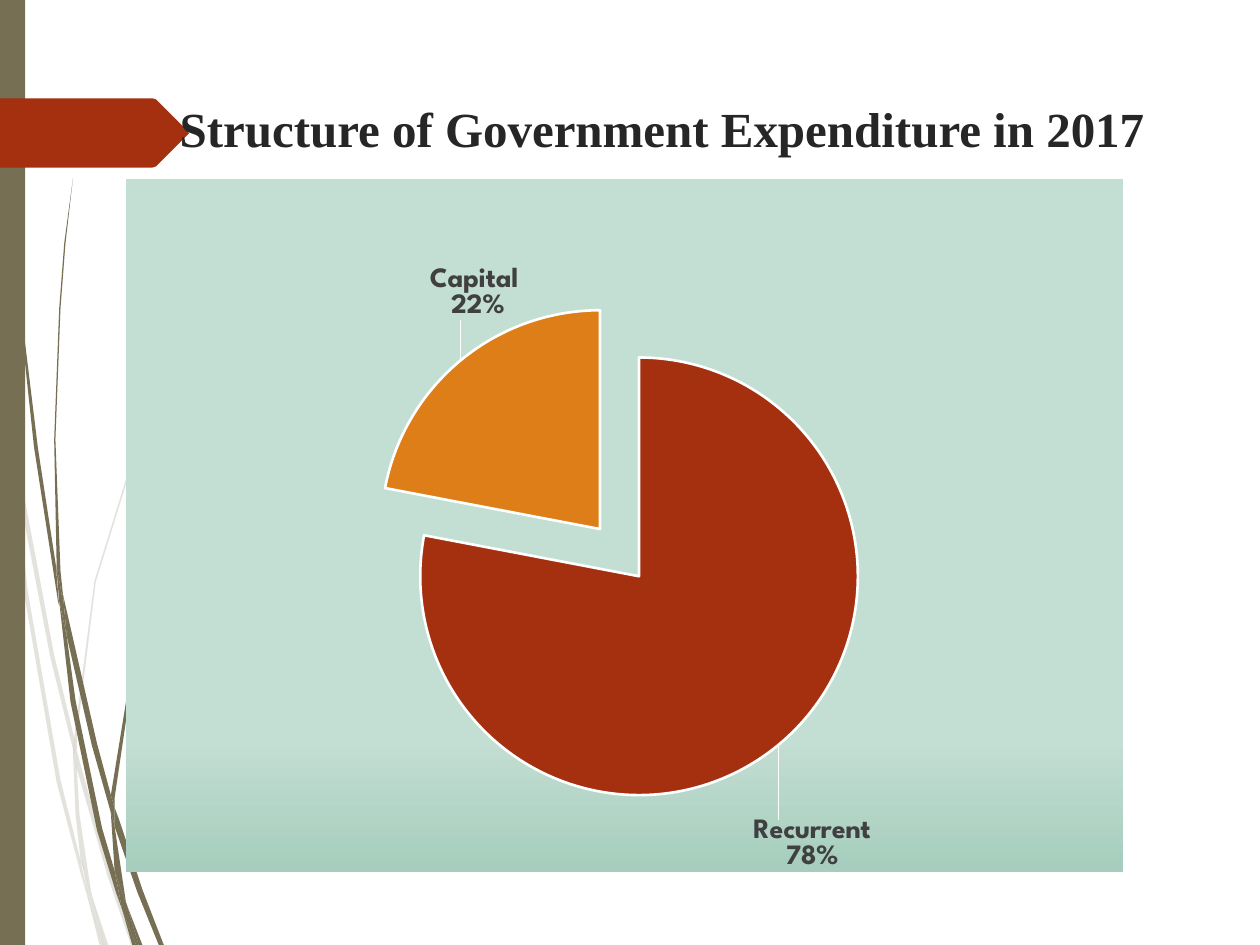
import copy
from dataclasses import dataclass

import lxml.etree
import pptx
import pptx.chart.data
import pptx.dml.color
import pptx.enum.chart
import pptx.enum.shapes
import pptx.enum.text
import pptx.oxml
import pptx.oxml.ns
import pptx.util
from pptx.util import Cm

RGBColor = pptx.dml.color.RGBColor
OLIVE = RGBColor(0x76, 0x6F, 0x54)
RUST = RGBColor(0xA5, 0x30, 0x10)
ORANGE = RGBColor(0xDE, 0x7E, 0x18)
WHITE = RGBColor(0xFF, 0xFF, 0xFF)
TITLE_COLOR = RGBColor(0x26, 0x26, 0x26)
LABEL_COLOR = RGBColor(0x40, 0x40, 0x40)
BLACK = RGBColor(0, 0, 0)
GRID = Cm(0.0254)  # outline points are hundredths of an inch
NAMESPACES = pptx.oxml.ns.nsdecls("c", "a")

Points = list[tuple[float, float]]


@dataclass
class Slice:
    name: str
    percent: int
    color: RGBColor
    label_shift: tuple[float, float]


SLICES = [
    Slice("Recurrent", 78, RUST, (-0.03, 0.1)),
    Slice("Capital ", 22, ORANGE, (0.07, -0.05)),
]

PALE_WISPS: list[Points] = [
    [(8, 350), (6, 322), (0, 282), (0, 299), (7, 344)],
    [(40, 522), (59, 599), (59, 586), (43, 520), (10, 345), (12, 376)],
    [(64, 607), (61, 596), (61, 610), (85, 694), (104, 750), (108, 750), (88, 692)],
    [(83, 750), (86, 750), (73, 711)],
    [(64, 683), (48, 619), (22, 469), (12, 376), (8, 350), (19, 470), (45, 621),
     (64, 693), (70, 714), (69, 707)],
    [(58, 599), (60, 646), (64, 683), (67, 692), (73, 711), (72, 706), (63, 646),
     (61, 610), (61, 608)],
    [(61, 584), (76, 462), (111, 349), (159, 245), (187, 198), (201, 175), (217, 154),
     (217, 153), (201, 175), (186, 197), (158, 244), (110, 348), (75, 461), (59, 584),
     (59, 586), (61, 596)],
    [(70, 714), (79, 750), (82, 750)],
    [(61, 608), (61, 610), (61, 596), (59, 586), (58, 599)],
    [(67, 692), (65, 683), (69, 707), (70, 714), (82, 750), (83, 750), (73, 711)],
]

DARK_WISPS: list[Points] = [
    [(5, 110), (14, 233), (27, 355), (46, 477), (47, 481), (45, 457), (45, 453),
     (30, 355), (15, 232), (6, 109), (4, 48), (3, 0), (2, 0), (3, 48)],
    [(73, 592), (88, 645), (88, 633), (88, 631), (77, 590), (50, 472), (53, 505)],
    [(94, 649), (91, 641), (91, 656), (109, 708), (126, 750), (130, 750), (113, 706)],
    [(91, 691), (81, 657), (60, 556), (53, 505), (47, 477), (56, 557), (77, 659),
     (92, 708), (97, 722), (96, 717)],
    [(50, 472), (48, 453), (44, 349), (48, 245), (52, 193), (58, 141), (57.5, 141),
     (51, 193), (47, 245), (43, 349), (45, 449), (49, 472)],
    [(110, 750), (113, 750), (101, 719)],
    [(47, 477), (53, 505), (50, 472), (49, 472), (45, 449), (45, 453)],
    [(91, 633), (103, 552), (131, 476), (169, 406), (191, 374), (203, 359), (216, 344),
     (215, 344), (203, 358), (191, 373), (168, 405), (129, 474), (101, 551), (88, 631),
     (91, 641)],
    [(97, 722), (105, 750), (108, 750)],
    [(88, 645), (91, 691), (96, 706), (101, 719), (100, 716), (91, 656), (90, 651)],
    [(88, 645), (90, 651), (91, 656), (91, 641), (88, 631), (88, 633)],
    [(96, 706), (91, 691), (96, 717), (97, 722), (108, 750), (110, 750), (101, 719)],
]

ARROW: Points = [(0, 78), (121, 78), (124, 79), (149, 104), (149.5, 105.5), (149, 107),
                 (124, 132), (121, 133), (0, 133)]


def paint(shape, color: RGBColor, opacity: int = 100) -> None:
    shape.shadow.inherit = False
    shape.fill.solid()
    shape.fill.fore_color.rgb = color
    shape.line.fill.background()
    if opacity < 100:
        color_element = shape.element.spPr.find(".//" + pptx.oxml.ns.qn("a:srgbClr"))
        alpha = lxml.etree.SubElement(color_element, pptx.oxml.ns.qn("a:alpha"))
        alpha.set("val", str(opacity * 1000))


def draw_outline(slide, points: Points, color: RGBColor, opacity: int = 100) -> None:
    builder = slide.shapes.build_freeform(*points[0], scale=GRID)
    builder.add_line_segments(points[1:], close=True)
    paint(builder.convert_to_shape(), color, opacity)


def draw_title(slide) -> None:
    box = slide.shapes.add_textbox(Cm(2.97), Cm(1.73), Cm(20.75), Cm(1.85))
    frame = box.text_frame
    frame.word_wrap = True
    frame.margin_top = Cm(0.25)
    frame.text = "Structure of Government Expenditure in 2017"
    paragraph = frame.paragraphs[0]
    paragraph.alignment = pptx.enum.text.PP_ALIGN.CENTER
    font = paragraph.runs[0].font
    font.name, font.size, font.bold = "Times New Roman", pptx.util.Pt(28), True
    font.color.rgb = TITLE_COLOR


def layout_xml(body: str) -> str:
    return f"<c:layout {NAMESPACES}><c:manualLayout>{body}</c:manualLayout></c:layout>"


def set_background(chart) -> None:
    stops = "".join(
        f'<a:gs pos="{position * 1000}"><a:srgbClr val="{color}"/></a:gs>'
        for position, color in [(0, "C3DED3"), (42, "C3DED3"), (81, "C3DED3"), (100, "A6CDBD")]
    )
    properties = pptx.oxml.parse_xml(
        f'<c:spPr {NAMESPACES}><a:gradFill><a:gsLst>{stops}</a:gsLst>'
        '<a:lin ang="5400000" scaled="0"/></a:gradFill><a:ln><a:noFill/></a:ln></c:spPr>')
    chart.element.find(pptx.oxml.ns.qn("c:chart")).addnext(properties)


def set_plot_area(chart) -> None:
    plot_area = chart.element.find(".//" + pptx.oxml.ns.qn("c:plotArea"))
    for layout in plot_area.findall(pptx.oxml.ns.qn("c:layout")):
        plot_area.remove(layout)
    plot_area.insert(0, pptx.oxml.parse_xml(layout_xml(
        '<c:layoutTarget val="inner"/><c:xMode val="edge"/><c:yMode val="edge"/>'
        '<c:x val="0.08"/><c:y val="0.18"/><c:w val="0.83"/><c:h val="0.72"/>')))


def label_slices(series) -> None:
    labels = series.data_labels
    labels.show_category_name = labels.show_percentage = True
    labels.show_value = False
    labels.position = pptx.enum.chart.XL_LABEL_POSITION.OUTSIDE_END
    font = labels.font
    font.name, font.size, font.bold = "League Spartan", pptx.util.Pt(16), True
    font.color.rgb = LABEL_COLOR
    root = series.data_labels._element
    text_properties = root.find(pptx.oxml.ns.qn("c:txPr"))
    for index, part in enumerate(SLICES):
        x, y = part.label_shift
        layout = layout_xml(f'<c:x val="{x}"/><c:y val="{y}"/>')
        label = pptx.oxml.parse_xml(
            f'<c:dLbl {NAMESPACES}><c:idx val="{index}"/>{layout}'
            '<c:dLblPos val="outEnd"/><c:showLegendKey val="0"/><c:showVal val="0"/>'
            '<c:showCatName val="1"/><c:showSerName val="0"/><c:showPercent val="1"/>'
            '<c:showBubbleSize val="0"/><c:separator>\n</c:separator></c:dLbl>')
        label.insert(2, copy.deepcopy(text_properties))
        root.insert(index, label)


def draw_chart(slide) -> None:
    data = pptx.chart.data.CategoryChartData()
    data.categories = [part.name for part in SLICES]
    data.add_series("Series 1", [part.percent for part in SLICES])
    chart = slide.shapes.add_chart(
        pptx.enum.chart.XL_CHART_TYPE.PIE_EXPLODED,
        Cm(2.54), Cm(3.6), Cm(20.1), Cm(13.97), data).chart
    chart.has_legend = chart.has_title = False
    chart.font.name, chart.font.size = "League Spartan", pptx.util.Pt(10)
    chart.font.color.rgb = BLACK
    chart.plots[0].vary_by_categories = True
    series = chart.plots[0].series[0]
    series.format.line.color.rgb = WHITE
    for explosion in chart.element.iter(pptx.oxml.ns.qn("c:explosion")):
        explosion.set("val", "14")
    for index, part in enumerate(SLICES):
        point_format = series.points[index].format
        point_format.fill.solid()
        point_format.fill.fore_color.rgb = part.color
        point_format.line.color.rgb = WHITE
        point_format.line.width = pptx.util.Pt(1.5)
    label_slices(series)
    set_background(chart)
    set_plot_area(chart)


def main() -> None:
    presentation = pptx.Presentation()
    presentation.slide_width, presentation.slide_height = Cm(25.4), Cm(19.05)
    slide = presentation.slides.add_slide(presentation.slide_layouts[6])
    for wisp in PALE_WISPS:
        draw_outline(slide, wisp, OLIVE, opacity=20)
    for wisp in DARK_WISPS:
        draw_outline(slide, wisp, OLIVE)
    band = slide.shapes.add_shape(
        pptx.enum.shapes.MSO_SHAPE.RECTANGLE, 0, 0, Cm(0.51), presentation.slide_height)
    paint(band, OLIVE)
    draw_outline(slide, ARROW, RUST)
    draw_title(slide)
    draw_chart(slide)
    presentation.save("out.pptx")


if __name__ == "__main__":
    main()
